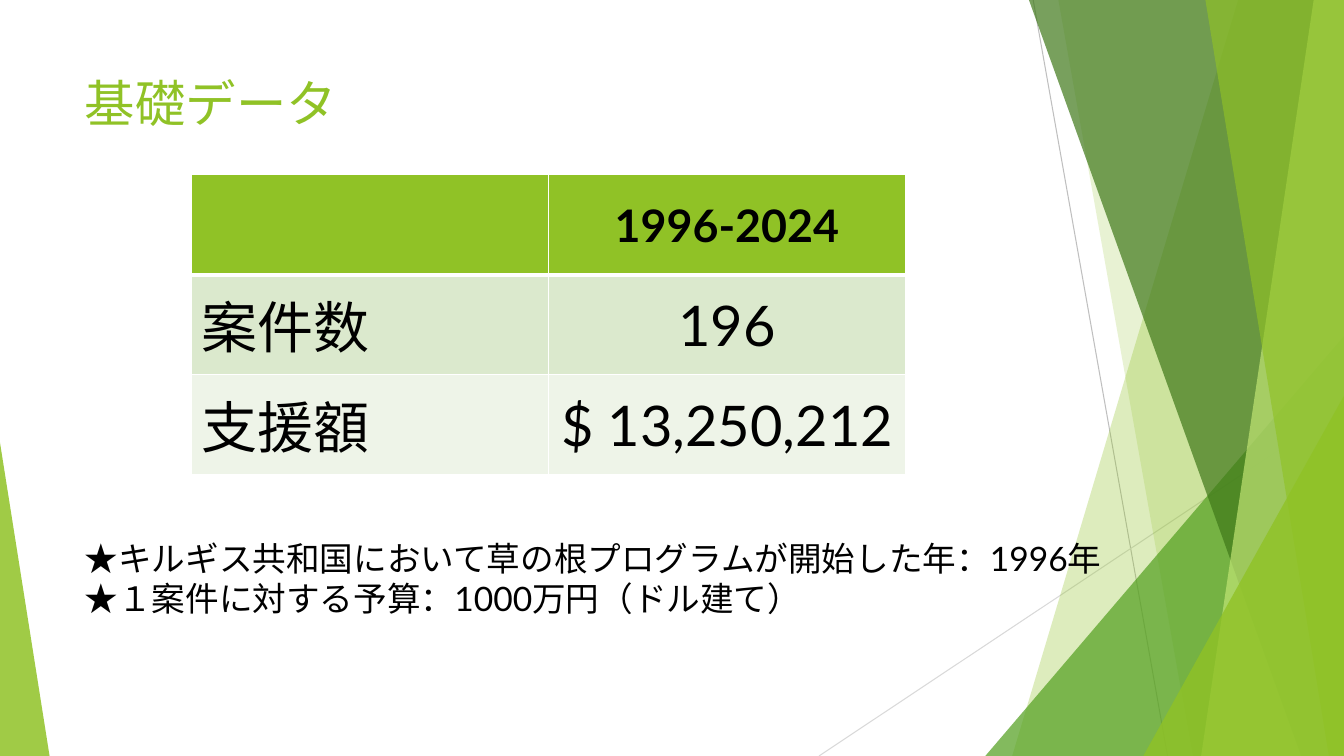
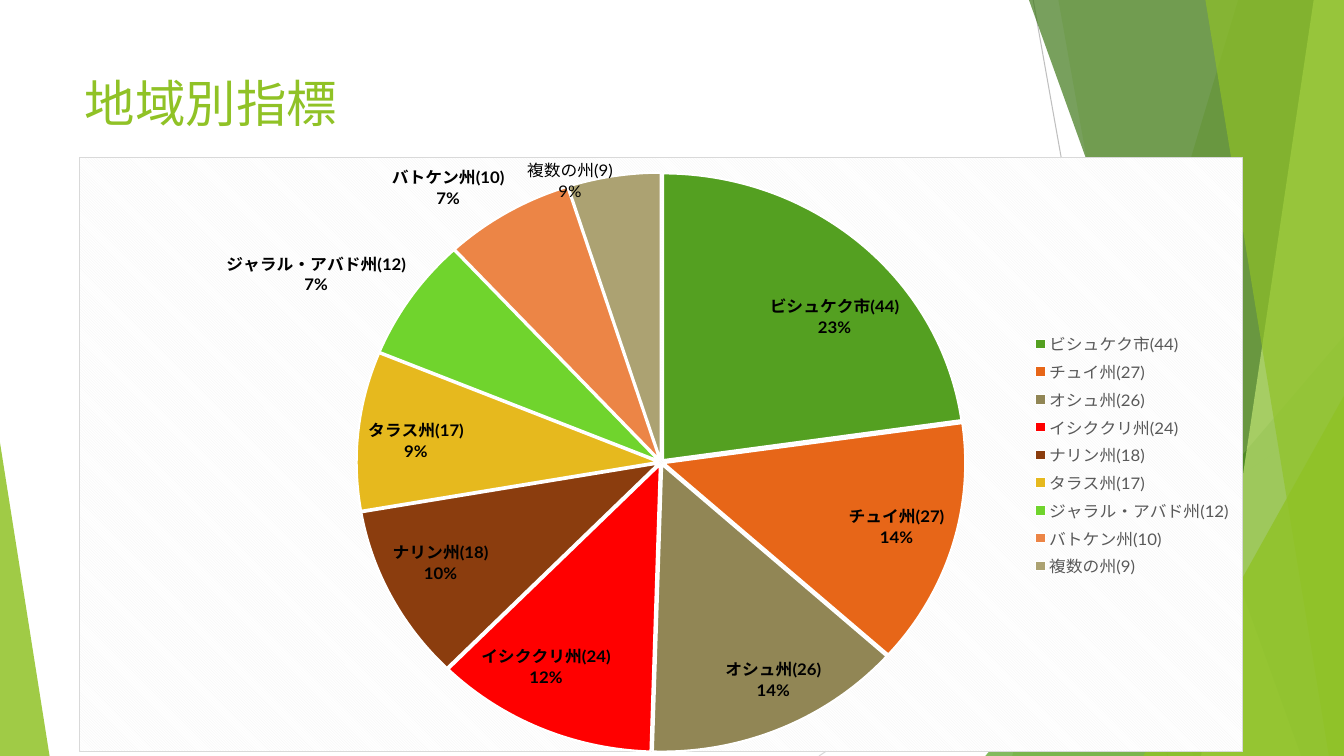
from lxml import etree
from pptx import Presentation
from pptx.chart.data import CategoryChartData
from pptx.dml.color import RGBColor
from pptx.enum.chart import XL_CHART_TYPE, XL_LABEL_POSITION, XL_LEGEND_POSITION
from pptx.enum.shapes import MSO_CONNECTOR, MSO_SHAPE
from pptx.enum.text import MSO_ANCHOR, MSO_AUTO_SIZE, PP_ALIGN
from pptx.oxml import parse_xml
from pptx.oxml.ns import nsdecls, qn
from pptx.util import Pt

STRAIGHT = MSO_CONNECTOR.STRAIGHT
TRIANGLE = MSO_SHAPE.ISOSCELES_TRIANGLE
LEFT, CENTER = PP_ALIGN.LEFT, PP_ALIGN.CENTER
TOP, MIDDLE = MSO_ANCHOR.TOP, MSO_ANCHOR.MIDDLE
NO_FIT = MSO_AUTO_SIZE.NONE
PIE = XL_CHART_TYPE.PIE
BEST_FIT = XL_LABEL_POSITION.BEST_FIT
LEGEND_RIGHT = XL_LEGEND_POSITION.RIGHT

FONT = "Lato"
LIME, GREEN, DARK_GREEN, PALE_LIME = "90C226", "54A021", "3F7819", "C0E474"
BLACK, WHITE, GRAY = "000000", "FFFFFF", "595959"

# The slide is a grid of 1600 columns by 900 rows of square units
UNIT = 7620
COLUMNS, ROWS = 1600, 900


def paint(fill, color):
    fill.solid()
    fill.fore_color.rgb = RGBColor.from_string(color)


def style_font(font, size, color, bold=False):
    font.name, font.size, font.bold = FONT, Pt(size), bold
    paint(font.fill, color)


deck = Presentation()
deck.slide_width, deck.slide_height = COLUMNS * UNIT, ROWS * UNIT
layout = deck.slide_layouts.get_by_name("Title Only")

# Two slides with the shared title style
slides = []
for heading, title_height in [("基礎データ", 86), ("地域別指標", 173)]:
    slide = deck.slides.add_slide(layout)
    title = slide.shapes.title
    title.left, title.top, title.width, title.height = [
        UNIT * length for length in (89, 80, 1128, title_height)]
    frame = title.text_frame
    frame.text = heading
    frame.auto_size, frame.vertical_anchor = NO_FIT, TOP
    frame.paragraphs[0].alignment = LEFT
    style_font(frame.paragraphs[0].runs[0].font, 36, LIME)
    slides.append(slide)
data_slide, region_slide = slides

# Backdrop: thin lines, then translucent bands and wedges, moved to the layout
backdrop = layout.shapes.element
for start_x, start_y, end_x, end_y, color in [
        (1230, 0, 1390, ROWS, "BFBFBF"),
        (COLUMNS, 484, 975, ROWS, "D9D9D9")]:
    line = data_slide.shapes.add_connector(
        STRAIGHT, start_x * UNIT, start_y * UNIT, end_x * UNIT, end_y * UNIT)
    line.line.width = Pt(0.75)
    paint(line.line.fill, color)
    etree.SubElement(line.element.spPr, qn("a:effectLst"))
    backdrop.append(line.element)

# A band has its left edge at the top and bottom of the slide;
# a wedge has left, top, width and the place of its apex
for kind, geometry, color, opacity in [
        ("band", (1474, 1205), LIME, 30),
        ("band", (1260, 1420), LIME, 20),
        ("wedge", (1173, 400, 427, 1), GREEN, 72),
        ("band", (1225, 1549), DARK_GREEN, 70),
        ("band", (1564, 1430), PALE_LIME, 70),
        ("band", (1435, 1582), LIME, 65),
        ("wedge", (1361, 471, 239, 1), LIME, 80),
        ("wedge", (0, 527, 59, 0), LIME, 85)]:
    if kind == "band":
        top_edge, bottom_edge = geometry
        outline = data_slide.shapes.build_freeform(top_edge, 0, UNIT)
        outline.add_line_segments(
            [(COLUMNS, 0), (COLUMNS, ROWS), (bottom_edge, ROWS)])
        shape = outline.convert_to_shape()
    else:
        left, top, width, apex = geometry
        shape = data_slide.shapes.add_shape(
            TRIANGLE, left * UNIT, top * UNIT, width * UNIT, (ROWS - top) * UNIT)
        shape.adjustments[0] = apex
    shape.shadow.inherit = False
    shape.line.fill.background()
    paint(shape.fill, color)
    tint = shape.element.spPr.find(qn("a:solidFill"))[0]
    etree.SubElement(tint, qn("a:alpha"), val=str(opacity * 1000))
    backdrop.append(shape.element)

# Table of basic figures; cell borders come before the fill in the XML
table_rows = [("", "1996-2024"), ("案件数", "196"), ("支援額", "$ 13,250,212")]
row_fills = [LIME, "DBE9CD", "EEF4E8"]
table = data_slide.shapes.add_table(
    3, 2, 228 * UNIT, 208 * UNIT, 850 * UNIT, 357 * UNIT).table
for row, texts in enumerate(table_rows):
    for column, text in enumerate(texts):
        cell = table.cell(row, column)
        cell.text, cell.vertical_anchor = text, MIDDLE
        para = cell.text_frame.paragraphs[0]
        para.alignment = CENTER if column else LEFT
        for span in para.runs:
            style_font(span.font, 40 if row else 32, BLACK, bold=row == 0)
        for side in "LRTB":
            thick = (row, side) in [(0, "B"), (1, "T")]
            cell._tc.get_or_add_tcPr().append(parse_xml(
                f'<a:ln{side} {nsdecls("a")} w="{Pt(3 if thick else 1)}">'
                f'<a:solidFill><a:srgbClr val="{WHITE}"/></a:solidFill></a:ln{side}>'))
        paint(cell.fill, row_fills[row])

# Notes below the table
box = data_slide.shapes.add_textbox(89 * UNIT, 634 * UNIT, 1273 * UNIT, 260 * UNIT)
box.text_frame.word_wrap = True
box.text_frame.text = ("★キルギス共和国において草の根プログラムが開始した年：1996年\n"
                       "★１案件に対する予算：1000万円（ドル建て）")
for para in box.text_frame.paragraphs:
    style_font(para.runs[0].font, 24, BLACK)

# Pie of regions
regions = [
    ("ビシュケク市(44)", 23, GREEN),
    ("チュイ州(27)", 14, "E76618"),
    ("オシュ州(26)", 14, "918655"),
    ("イシククリ州(24)", 12, "FF0000"),
    ("ナリン州(18)", 10, "8B3D0E"),
    ("タラス州(17)", 9, "E6B91E"),
    ("ジャラル・アバド州(12)", 7, "70D42D"),
    ("バトケン州(10)", 7, "EC8546"),
    ("複数の州(9)", 5, "ACA272"),
]
names, shares, colors = zip(*regions)
chart_data = CategoryChartData()
chart_data.categories = names
chart_data.add_series("Series 1", shares)
chart = region_slide.shapes.add_chart(
    PIE, 94 * UNIT, 152 * UNIT, 1386 * UNIT, 744 * UNIT, chart_data).chart
chart.has_title = False
style_font(chart.font, 10, BLACK)
chart.has_legend = True
chart.legend.position, chart.legend.include_in_layout = LEGEND_RIGHT, False
style_font(chart.legend.font, 12, GRAY)

# Slices
plot = chart.plots[0]
plot.vary_by_categories = True
series = plot.series[0]
for index, color in enumerate(colors):
    slice_format = series.points[index].format
    paint(slice_format.fill, color)
    paint(slice_format.line.fill, WHITE)
    slice_format.line.width = Pt(1.5)
chart_space = chart.element if hasattr(chart, "element") else chart._chartSpace
plot_area = chart_space.find(".//" + qn("c:plotArea"))
series_element = plot_area.find(".//" + qn("c:ser"))
series_element.find(qn("c:dPt")).addprevious(
    parse_xml(f'<c:explosion {nsdecls("c")} val="1"/>'))

# Slice labels: name above share, the last one with its own wording
labels = series.data_labels
labels.show_category_name = labels.show_percentage = True
labels.show_value = False
labels.position = BEST_FIT
style_font(labels.font, 12, BLACK, bold=True)
separator = parse_xml(f'<c:separator {nsdecls("c")}>\n</c:separator>')
series_element.find(qn("c:dLbls")).find(qn("c:showBubbleSize")).addnext(separator)
last_label = series.points[len(regions) - 1].data_label
last_label.text_frame.text = f"{names[-1]}\n9%"
last_label.position = BEST_FIT
for para in last_label.text_frame.paragraphs:
    style_font(para.runs[0].font, 12, BLACK)

# Plot area and hatched chart background
for old_layout in plot_area.findall(qn("c:layout")):
    plot_area.remove(old_layout)
plot_area.insert(0, parse_xml(
    f'<c:layout {nsdecls("c")}><c:manualLayout><c:layoutTarget val="inner"/>'
    '<c:xMode val="edge"/><c:yMode val="edge"/><c:x val="0"/><c:y val="0.025"/>'
    '<c:w val="1"/><c:h val="0.975"/></c:manualLayout></c:layout>'))
chart_space.find(qn("c:txPr")).addprevious(parse_xml(
    f'<c:spPr {nsdecls("c", "a")}><a:pattFill prst="dkDnDiag">'
    '<a:fgClr><a:srgbClr val="F2F2F2"/></a:fgClr>'
    '<a:bgClr><a:srgbClr val="FFFFFF"/></a:bgClr></a:pattFill>'
    f'<a:ln w="{Pt(0.75)}"><a:solidFill><a:srgbClr val="D9D9D9"/></a:solidFill></a:ln>'
    '</c:spPr>'))

deck.save("out.pptx")
